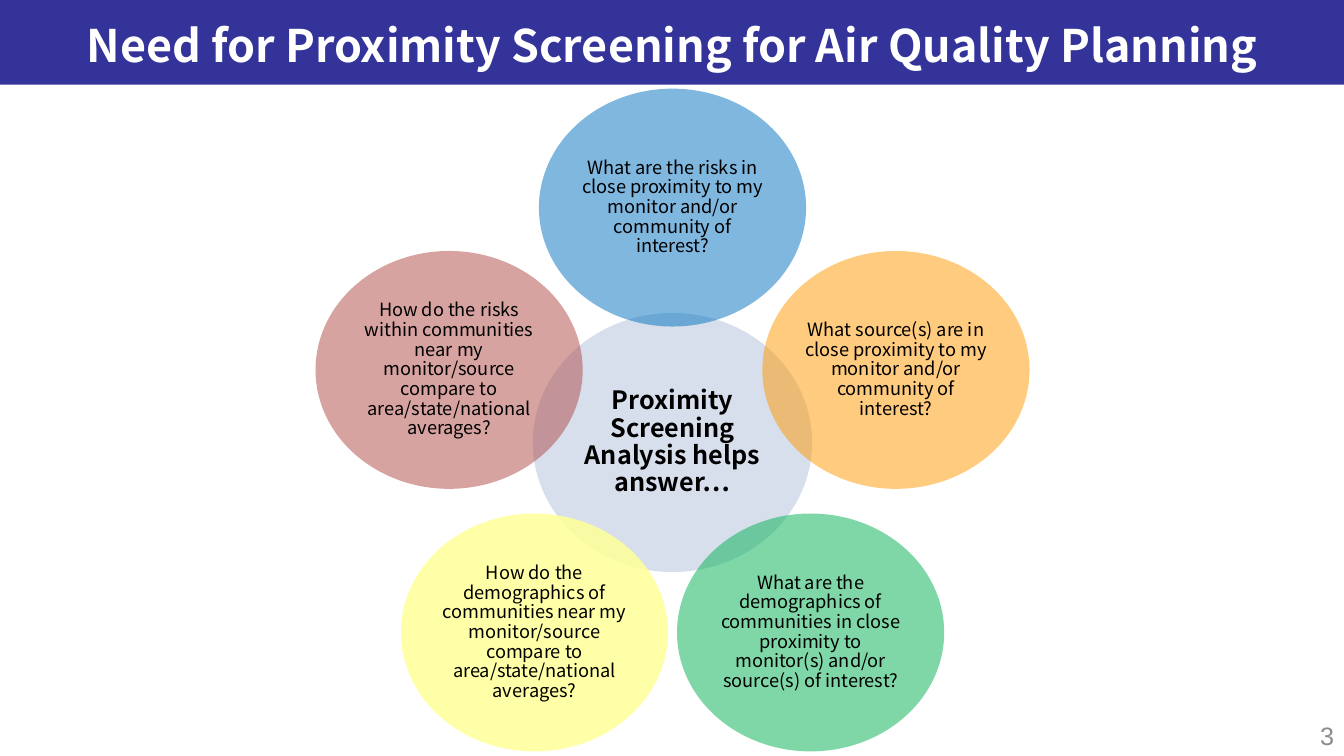
import math

import pptx
import pptx.dml.color
import pptx.enum.shapes
import pptx.enum.text
import pptx.oxml
import pptx.oxml.ns
import pptx.util
from pptx.util import Inches

FONT = "Noto Sans CJK SC"
ALIGN = pptx.enum.text.PP_ALIGN
SHAPE = pptx.enum.shapes.MSO_SHAPE
CENTER_X, RING_Y, RING_RADIUS = 6.67, 4.39, 2.33

# Clockwise from the top: question, fill colour, opacity in percent
QUESTIONS = [
    ("What are the risks in close proximity to my monitor and/or "
     "community of interest?", "0070C0", 50),
    ("What source(s) are in close proximity to my monitor and/or "
     "community of interest?", "FF9900", 50),
    ("What are the demographics of communities in close proximity to "
     "monitor(s) and/or source(s) of interest?", "00B050", 50),
    ("How do the demographics of communities near my monitor/source "
     "compare to area/state/national averages?", "FFFF99", 86),
    ("How do the risks within communities near my monitor/source "
     "compare to area/state/national averages?", "AE4845", 50),
]


def rgb(color):
    return pptx.dml.color.RGBColor.from_string(color)


def set_text(shape, text, size, color, font=FONT, bold=False,
             align=ALIGN.CENTER):
    tf = shape.text_frame
    tf.text = text
    tf.word_wrap = True
    tf.auto_size = pptx.enum.text.MSO_AUTO_SIZE.NONE
    p = tf.paragraphs[0]
    p.alignment = align
    p.font.name = font
    p.font.size = pptx.util.Pt(size)
    p.font.bold = bold
    p.font.color.rgb = rgb(color)
    return tf


def add_filled(s, kind, left, top, width, height, color):
    """Add a flat shape with a solid fill and no outline."""
    sp = s.shapes.add_shape(kind, Inches(left), Inches(top),
                            Inches(width), Inches(height))
    sp.shadow.inherit = False
    sp.fill.solid()
    sp.fill.fore_color.rgb = rgb(color)
    sp.line.fill.background()
    return sp


def add_bubble(s, x, y, width, height, text, color, opacity, size, inset,
               bold=False):
    """Add a translucent captioned ellipse centred on x, y."""
    sp = add_filled(s, SHAPE.OVAL, x - width / 2, y - height / 2,
                    width, height, color)
    srgb = sp.element.spPr.find(".//" + pptx.oxml.ns.qn("a:srgbClr"))
    srgb.append(pptx.oxml.parse_xml(
        f'<a:alpha {pptx.oxml.ns.nsdecls("a")} val="{opacity * 1000}"/>'))
    tf = set_text(sp, text, size, "000000", bold=bold)
    tf.vertical_anchor = pptx.enum.text.MSO_ANCHOR.MIDDLE
    tf.margin_left = tf.margin_right = Inches(inset)
    tf.margin_top = tf.margin_bottom = Inches(inset)
    tf.paragraphs[0].line_spacing = 0.9


def add_title(s, text):
    title = s.shapes.title
    title.left, title.top = Inches(0.3), Inches(0.08)
    title.width, title.height = Inches(12.74), Inches(0.73)
    tf = set_text(title, text, 32, "FFFFFF", bold=True)
    tf.vertical_anchor = pptx.enum.text.MSO_ANCHOR.MIDDLE
    band = add_filled(s, SHAPE.RECTANGLE, 0, 0, 13.33, 0.84, "333399")
    title.element.addprevious(band.element)


def add_page_number(s, number):
    box = s.shapes.add_textbox(Inches(11), Inches(7.1),
                               Inches(2.33), Inches(0.4))
    set_text(box, number, 18, "8C8C8C", font="Arial", align=ALIGN.RIGHT)


def main():
    prs = pptx.Presentation()
    prs.slide_width, prs.slide_height = Inches(13.33), Inches(7.5)
    s = prs.slides.add_slide(prs.slide_layouts.get_by_name("Title Only"))

    add_title(s, "Need for Proximity Screening for Air Quality Planning")
    add_bubble(s, CENTER_X, RING_Y, 2.77, 2.57,
               "Proximity Screening Analysis helps answer…",
               "B2C1DB", 50, 18, 0.03, bold=True)
    for i, (question, color, opacity) in enumerate(QUESTIONS):
        angle = math.tau * i / len(QUESTIONS)
        add_bubble(s, CENTER_X + RING_RADIUS * math.sin(angle),
                   RING_Y - RING_RADIUS * math.cos(angle), 2.65, 2.36,
                   question, color, opacity, 13, 0.02)
    add_page_number(s, "3")
    prs.save("out.pptx")


if __name__ == "__main__":
    main()
